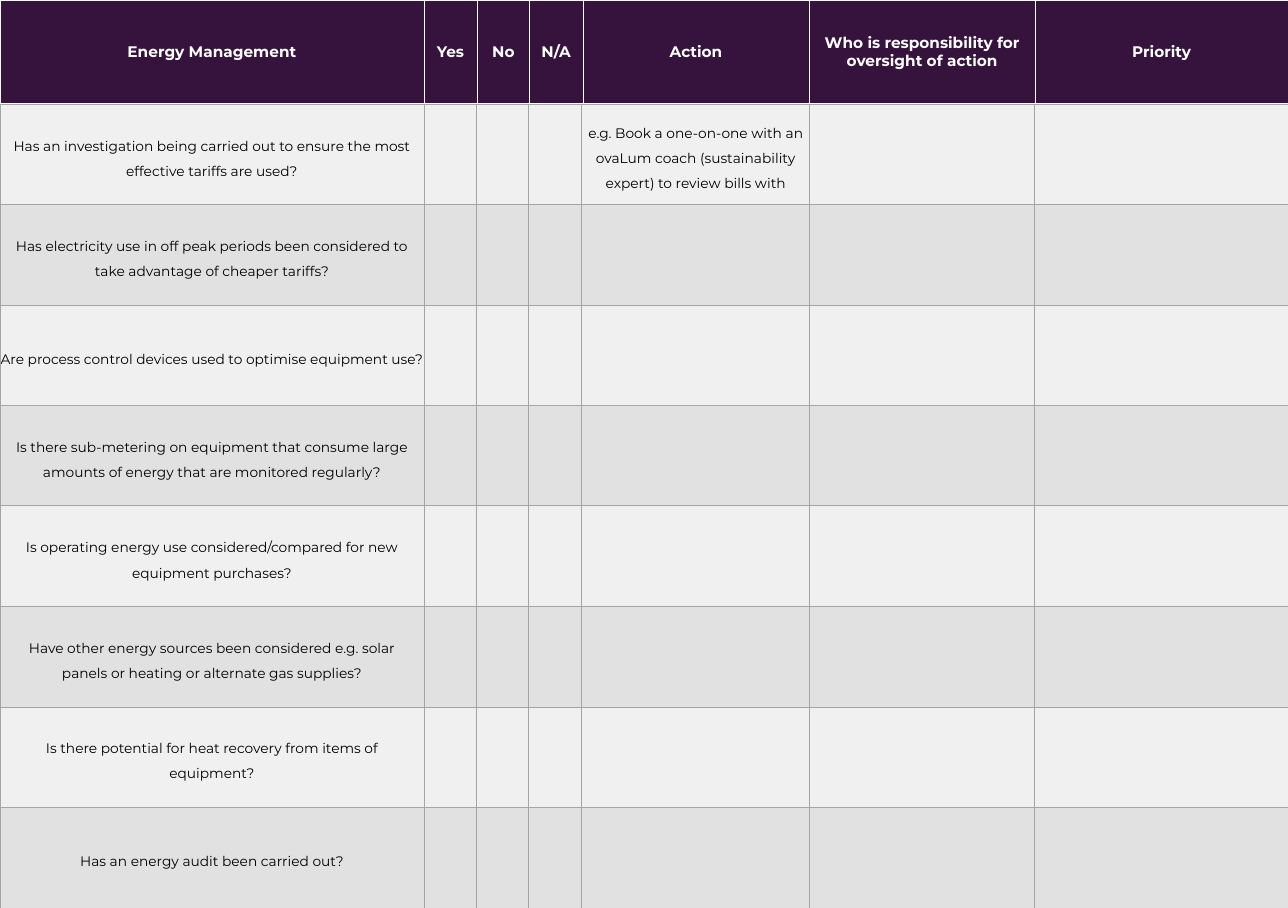
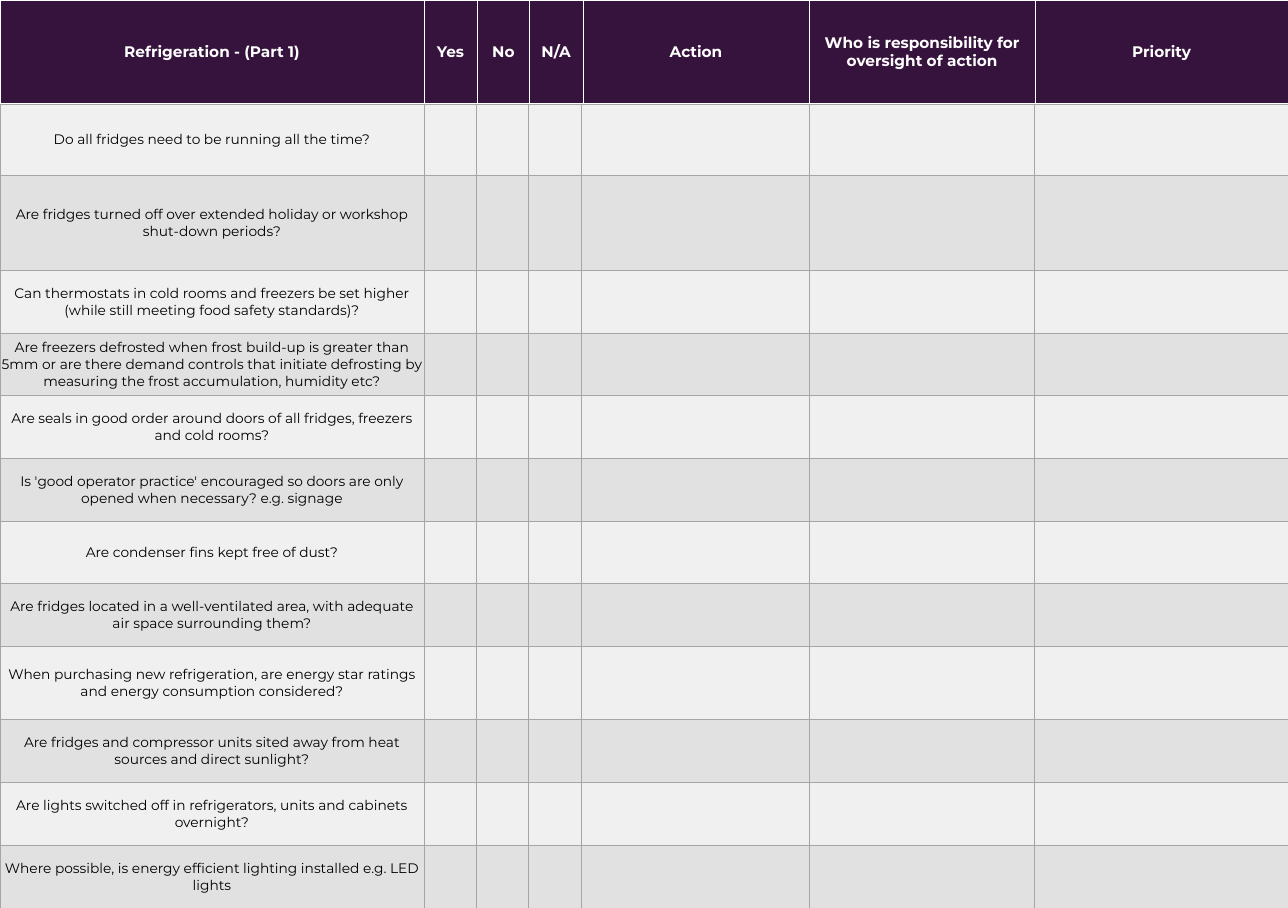
import pptx
import pptx.dml.color
import pptx.enum.text
import pptx.oxml.ns
import pptx.util
from lxml import etree

SCALE = 9144  # EMU per px, 100 px to the inch
WIDE, HIGH, HEAD = 2340, 1650, 189
FONT = "Montserrat"
COLORS = {"head": "36133C", "white": "FFFFFF", "text": "000000",
          "line": "A5A5A5", "light": "F0F0F0", "dark": "E1E1E1"}
HEADCOLS = [770, 97, 95, 97, 411, 411, 459]
BODYCOLS = [770, 95, 95, 97, 414, 408, 461]
LABELS = ["Yes", "No", "N/A", "Action",
          "Who is responsibility for oversight of action", "Priority"]
ACTION = 4  # column that holds the suggested actions

ENERGY = [
    "Has an investigation being carried out to ensure the most effective tariffs are used?",
    "Has electricity use in off peak periods been considered to take advantage of cheaper tariffs?",
    "Are process control devices used to optimise equipment use?",
    "Is there sub-metering on equipment that consume large amounts of energy that are monitored regularly?",
    "Is operating energy use considered/compared for new equipment purchases?",
    "Have other energy sources been considered e.g. solar panels or heating or alternate gas supplies?",
    "Is there potential for heat recovery from items of equipment?",
    "Has an energy audit been carried out?",
]
ADVICE = {0: "e.g. Book a one-on-one with an ovaLum coach (sustainability expert) "
             "to review bills with"}
FRIDGES = [
    "Do all fridges need to be running all the time?",
    "Are fridges turned off over extended holiday or workshop shut-down periods?",
    "Can thermostats in cold rooms and freezers be set higher (while still meeting food safety standards)?",
    "Are freezers defrosted when frost build-up is greater than 5mm or are there demand controls "
    "that initiate defrosting by measuring the frost accumulation, humidity etc?",
    "Are seals in good order around doors of all fridges, freezers and cold rooms?",
    "Is 'good operator practice' encouraged so doors are only opened when necessary? e.g. signage",
    "Are condenser fins kept free of dust?",
    "Are fridges located in a well-ventilated area, with adequate air space surrounding them?",
    "When purchasing new refrigeration, are energy star ratings and energy consumption considered?",
    "Are fridges and compressor units sited away from heat sources and direct sunlight?",
    "Are lights switched off in refrigerators, units and cabinets overnight?",
    "Where possible, is energy efficient lighting installed e.g. LED lights",
]
TALL = {0: 130, 1: 172, 8: 133}  # refrigeration rows higher than the rest


def px(n):
    return pptx.util.Emu(n * SCALE)


def rgb(name):
    return pptx.dml.color.RGBColor.from_string(COLORS[name])


def share(total, count):
    """Split a length into whole, nearly equal parts."""
    edges = [round(total * i / count) for i in range(count + 1)]
    return [b - a for a, b in zip(edges, edges[1:])]


def edge(cell, color, base=1):
    """Draw the four borders of a cell; base is the bottom width in points."""
    props = cell._tc.get_or_add_tcPr()
    for side, width in zip("LRTB", (1, 1, 1, base)):
        line = etree.SubElement(props, pptx.oxml.ns.qn("a:ln" + side),
                                w=str(pptx.util.Pt(width)))
        fill = etree.SubElement(line, pptx.oxml.ns.qn("a:solidFill"))
        etree.SubElement(fill, pptx.oxml.ns.qn("a:srgbClr"), val=COLORS[color])


def paint(cell, color):
    cell.fill.solid()
    cell.fill.fore_color.rgb = rgb(color)


def write(cell, text, size, color, bold=False, space=None):
    cell.vertical_anchor = pptx.enum.text.MSO_ANCHOR.MIDDLE
    para = cell.text_frame.paragraphs[0]
    para.alignment = pptx.enum.text.PP_ALIGN.CENTER
    para.line_spacing = space
    run = para.add_run()
    run.text = text
    run.font.name = FONT
    run.font.size = pptx.util.Pt(size)
    run.font.bold = bold
    run.font.color.rgb = rgb(color)


def tight(cell):
    cell.margin_left = cell.margin_right = 0
    cell.margin_top, cell.margin_bottom = px(1), 0


def grid(slide, top, cols, rows):
    """Add a plain table with the given column widths and row heights."""
    frame = slide.shapes.add_table(len(rows), len(cols), 0, px(top),
                                   px(sum(cols)), px(sum(rows)))
    table = frame.table
    table.first_row = table.horz_banding = False
    for col, width in zip(table.columns, cols):
        col.width = px(width)
    for row, height in zip(table.rows, rows):
        row.height = px(height)
    return table


def header(slide, title):
    table = grid(slide, 0, HEADCOLS, [HEAD])
    for cell, label in zip(table.iter_cells(), [title] + LABELS):
        edge(cell, "white", 3)
        paint(cell, "head")
        write(cell, label, 20, "white", bold=True)


def body(slide, asks, rows, space, advice, snug):
    """Add the question rows; the first snug rows have no text inset."""
    table = grid(slide, HEAD, BODYCOLS, rows)
    for i, ask in enumerate(asks):
        texts = {0: ask}
        if i in advice:
            texts[ACTION] = advice[i]
        for j, cell in enumerate(table.rows[i].cells):
            edge(cell, "line")
            paint(cell, "dark" if i % 2 else "light")
            if j in texts:
                write(cell, texts[j], 18, "text", space=space)
                if i < snug:
                    tight(cell)


def sheet(deck, title, asks, rows, space=None, advice={}, snug=12):
    slide = deck.slides.add_slide(deck.slide_layouts[6])
    header(slide, title)
    body(slide, asks, rows, space, advice, snug)


def main():
    deck = pptx.Presentation()
    deck.slide_width, deck.slide_height = px(WIDE), px(HIGH)
    sheet(deck, "Energy Management", ENERGY, share(HIGH - HEAD, len(ENERGY)),
          space=1.5, advice=ADVICE, snug=5)
    sheet(deck, "Refrigeration - (Part 1)", FRIDGES,
          [TALL.get(i, 114) for i in range(len(FRIDGES))])
    deck.save("out.pptx")


if __name__ == "__main__":
    main()
